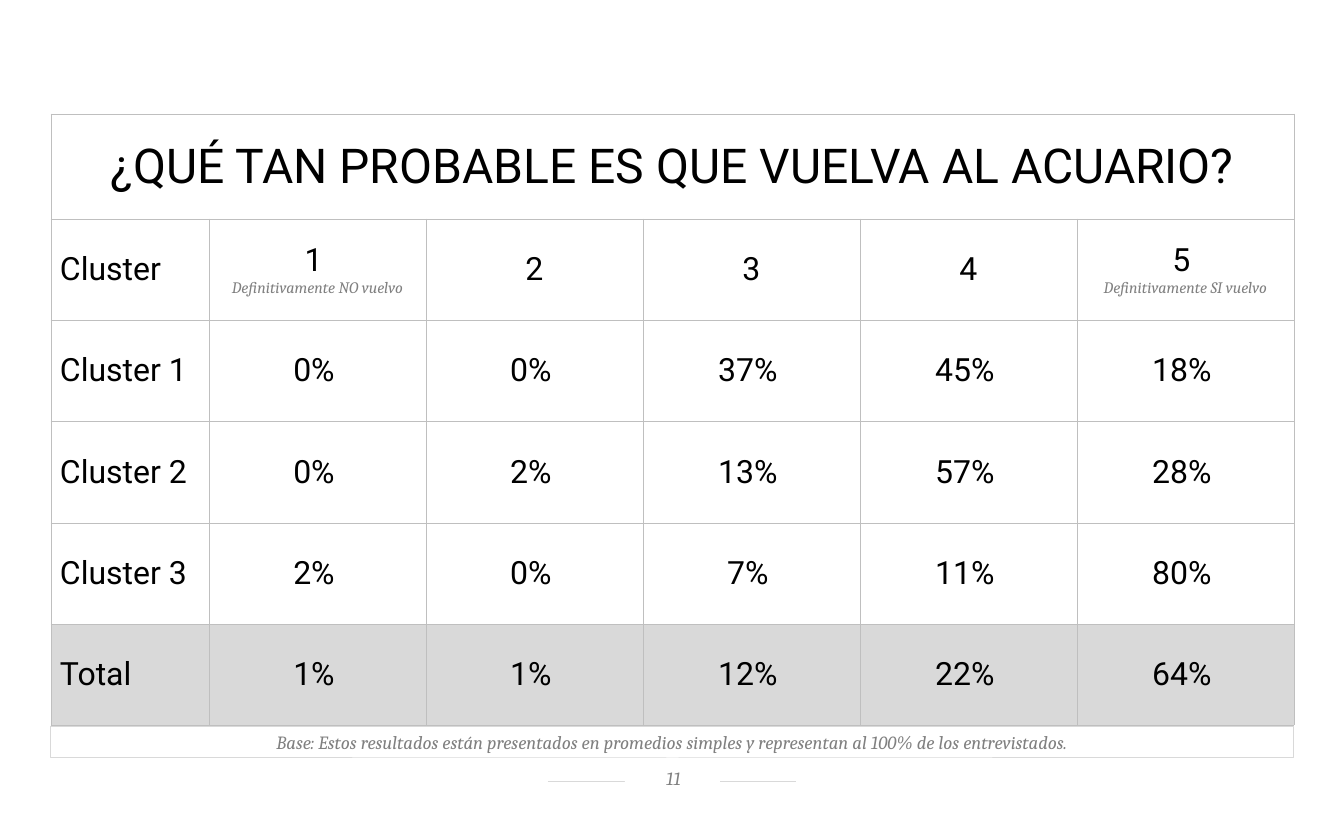
"""Build the slide with the table of likelihood to return, by cluster."""
from lxml import etree
from pptx import Presentation
from pptx import util as u
from pptx.dml.color import RGBColor
from pptx.enum import shapes, text
from pptx.oxml import parse_xml
from pptx.oxml.ns import nsdecls, qn

PX = 9525
GREY, RULE, BORDER = "808080", "D9D9D9", "BFBFBF"


def color(value):
    return RGBColor.from_string(value)


def write(frame, words, size=24, font="Roboto", ink="000000", italic=False,
          align=text.PP_ALIGN.CENTER, new_para=False):
    para = frame.add_paragraph() if new_para else frame.paragraphs[0]
    para.alignment = align
    span = para.add_run()
    span.text = words
    span.font.size = u.Pt(size)
    span.font.name = font
    span.font.italic = italic
    span.font.color.rgb = color(ink)


deck = Presentation()
deck.slide_width, deck.slide_height = 1344 * PX, 816 * PX
page = deck.slides.add_slide(deck.slide_layouts[6])

footer_rule = page.shapes.add_connector(
    shapes.MSO_CONNECTOR.STRAIGHT, 548 * PX, 781 * PX, 796 * PX, 781 * PX)
footer_rule.line.color.rgb = color(RULE)
footer_rule.line.width = u.Pt(0.5)
etree.SubElement(footer_rule.element.spPr, qn("a:effectLst"))

base_note = "Base: Estos resultados están presentados en promedios simples y representan al 100% de los entrevistados."
boxes = [
    ("11", (625, 766, 95, 28), (12, 2, 10, 5), text.MSO_ANCHOR.MIDDLE, None),
    (base_note, (51, 726, 1243, 32), (10, 5, 10, 5), text.MSO_ANCHOR.BOTTOM, RULE),
]
for words, area, insets, anchor, outline in boxes:
    box = page.shapes.add_shape(shapes.MSO_SHAPE.RECTANGLE, *[n * PX for n in area])
    box.shadow.inherit = False
    box.fill.solid()
    box.fill.fore_color.rgb = color("FFFFFF")
    if outline:
        box.line.color.rgb = color(outline)
        box.line.width = u.Pt(0.75)
    else:
        box.line.fill.background()
    frame = box.text_frame
    frame.word_wrap = True
    frame.vertical_anchor = anchor
    frame.margin_left, frame.margin_top, frame.margin_right, frame.margin_bottom = [n * PX for n in insets]
    write(frame, words, size=14, font="Cambria", ink=GREY, italic=True)

rows = [
    ["¿QUÉ TAN PROBABLE ES QUE VUELVA AL ACUARIO?", "", "", "", "", ""],
    ["Cluster", "1 ", "2", "3", "4", "5 "],
    ["Cluster 1", "0%", "0%", "37%", "45%", "18%"],
    ["Cluster 2", "0%", "2%", "13%", "57%", "28%"],
    ["Cluster 3", "2%", "0%", "7%", "11%", "80%"],
    ["Total", "1%", "1%", "12%", "22%", "64%"],
]
scale_labels = {1: "Definitivamente NO vuelvo", 5: "Definitivamente SI vuelvo"}
widths = [158] + [217] * 5
heights = [105, 101, 101, 102, 101, 101]

table = page.shapes.add_table(
    len(rows), len(widths), 51 * PX, 114 * PX, sum(widths) * PX, sum(heights) * PX).table
table.first_row = table.horz_banding = False
for column, width in zip(table.columns, widths):
    column.width = width * PX
for row, height in zip(table.rows, heights):
    row.height = height * PX
table.cell(0, 0).merge(table.cell(0, len(widths) - 1))

for r, values in enumerate(rows):
    for c, value in enumerate(values):
        cell = table.cell(r, c)
        is_label = r > 0 and c == 0
        cell.vertical_anchor = text.MSO_ANCHOR.MIDDLE
        cell.margin_left = (9 if is_label else 1) * PX
        cell.margin_top, cell.margin_bottom = PX, 0
        cell.margin_right = (8 if r > 1 and c > 0 else 1) * PX
        properties = cell._tc.get_or_add_tcPr()
        for side in ("lnL", "lnR", "lnT", "lnB"):
            properties.append(parse_xml(
                f'<a:{side} {nsdecls("a")} w="6350"><a:solidFill>'
                f'<a:srgbClr val="{BORDER}"/></a:solidFill></a:{side}>'))
        if r == len(rows) - 1:
            cell.fill.solid()
            cell.fill.fore_color.rgb = color(RULE)
        else:
            cell.fill.background()
        if value:
            write(cell.text_frame, value, size=36 if r == 0 else 24,
                  align=text.PP_ALIGN.LEFT if is_label else text.PP_ALIGN.CENTER)
        if r == 1 and c in scale_labels:
            write(cell.text_frame, scale_labels[c], size=12, font="Cambria",
                  ink=GREY, italic=True, new_para=True)

deck.save("out.pptx")
